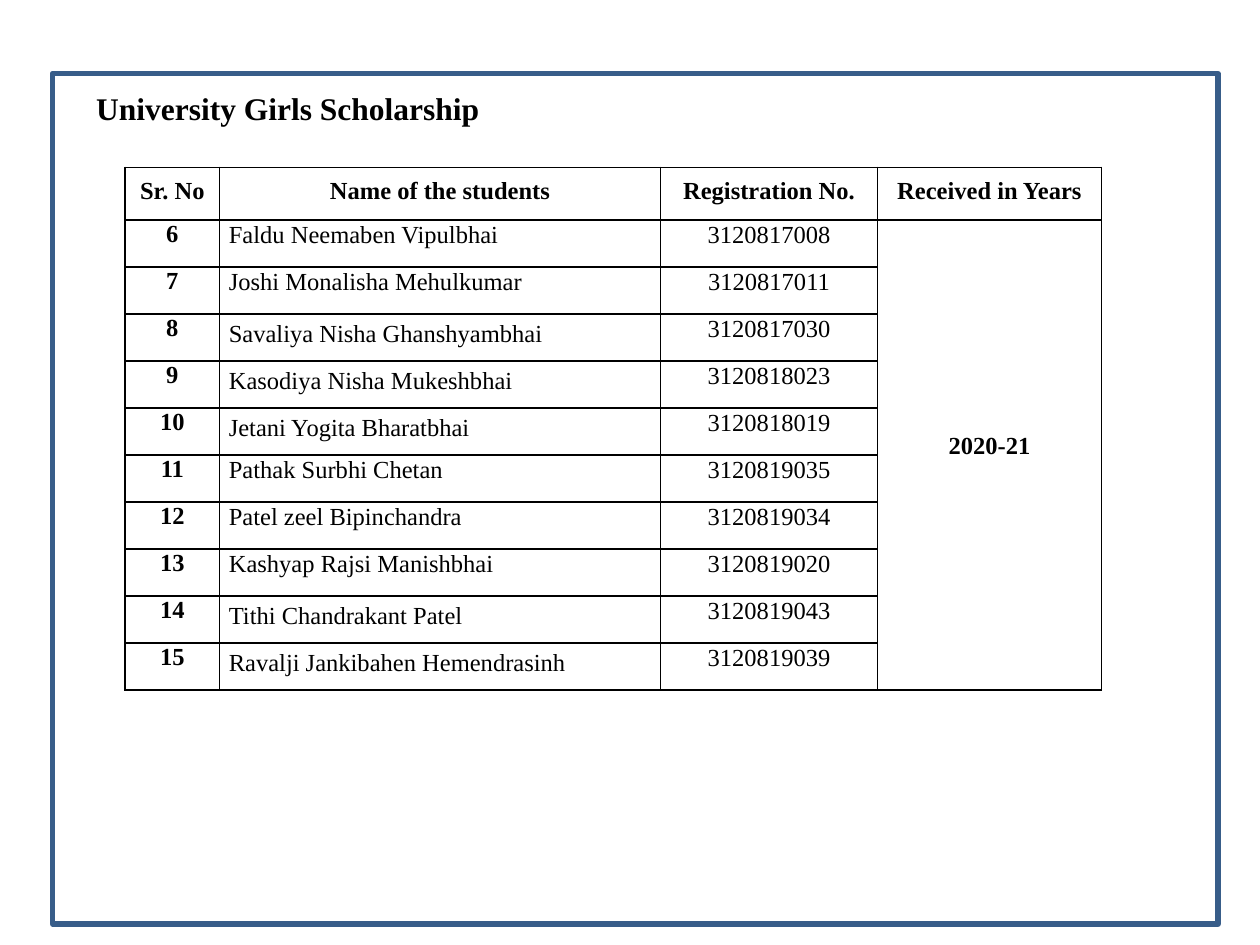
import dataclasses

import pptx
import pptx.dml.color
import pptx.enum.shapes
import pptx.enum.text
import pptx.oxml
import pptx.oxml.ns
import pptx.util

Pt = pptx.util.Pt
ALIGN = pptx.enum.text.PP_ALIGN
ANCHOR = pptx.enum.text.MSO_ANCHOR


@dataclasses.dataclass(frozen=True)
class Theme:
    """Colours, font and type sizes of the slide."""
    font: str = "Times New Roman"
    ink: str = "000000"
    frame: str = "385D89"
    title_size: float = 18
    table_size: float = 14
    frame_width: float = 3
    border_width: float = 1


THEME = Theme()
HEADINGS = ("Sr. No", "Name of the students", "Registration No.", "Received in Years")
FIRST_NUMBER = 6
STUDENTS = (
    ("Faldu Neemaben Vipulbhai", "3120817008", False),
    ("Joshi Monalisha Mehulkumar", "3120817011", False),
    ("Savaliya Nisha Ghanshyambhai", "3120817030", True),
    ("Kasodiya Nisha Mukeshbhai", "3120818023", True),
    ("Jetani Yogita Bharatbhai", "3120818019", True),
    ("Pathak Surbhi Chetan", "3120819035", False),
    ("Patel zeel Bipinchandra", "3120819034", False),
    ("Kashyap Rajsi Manishbhai", "3120819020", False),
    ("Tithi Chandrakant Patel", "3120819043", True),
    ("Ravalji Jankibahen Hemendrasinh", "3120819039", True),
)
YEARS = "2020-21"
COLUMN_WIDTHS = (54, 252, 124, 128)
HEADER_HEIGHT = 30
ROW_HEIGHT = 26.9


def set_margins(holder, left=0, top=0, bottom=0):
    """Set the inner margins of a cell or text frame."""
    holder.margin_left, holder.margin_right = Pt(left), Pt(0)
    holder.margin_top, holder.margin_bottom = Pt(top), Pt(bottom)


def write(paragraph, text, size, bold, align, before=0, line=None):
    """Write one run of text into a paragraph and format both."""
    paragraph.alignment = align
    paragraph.space_before = Pt(before)
    if line:
        paragraph.line_spacing = Pt(line)
    run = paragraph.add_run()
    run.text = text
    run.font.name = THEME.font
    run.font.size = Pt(size)
    run.font.bold = bold
    run.font.color.rgb = pptx.dml.color.RGBColor.from_string(THEME.ink)


def add_frame(slide):
    """Draw the border around the slide content."""
    frame = slide.shapes.add_shape(
        pptx.enum.shapes.MSO_SHAPE.RECTANGLE, Pt(30), Pt(42), Pt(666), Pt(486))
    frame.shadow.inherit = False
    frame.fill.background()
    frame.line.color.rgb = pptx.dml.color.RGBColor.from_string(THEME.frame)
    frame.line.width = Pt(THEME.frame_width)


def set_title(slide, text):
    """Place and format the slide title."""
    title = slide.shapes.title
    title.left, title.top, title.width, title.height = Pt(54), Pt(49.7), Pt(224), Pt(24)
    frame = title.text_frame
    frame.word_wrap = True
    frame.auto_size = pptx.enum.text.MSO_AUTO_SIZE.NONE
    frame.vertical_anchor = ANCHOR.TOP
    set_margins(frame, left=1, top=1)
    write(frame.paragraphs[0], text, THEME.title_size, True, ALIGN.LEFT, before=1)


def style_cell(cell):
    """Clear the fill of a cell and outline all its sides."""
    properties = cell._tc.get_or_add_tcPr()
    for side in ("lnL", "lnR", "lnT", "lnB"):
        properties.append(pptx.oxml.parse_xml(
            f'<a:{side} {pptx.oxml.ns.nsdecls("a")} w="{Pt(THEME.border_width)}">'
            f'<a:solidFill><a:srgbClr val="{THEME.ink}"/></a:solidFill></a:{side}>'))
    cell.fill.background()
    set_margins(cell)


def write_cell(cell, text, bold=False, align=ALIGN.CENTER, left=0, top=0, before=0, line=None):
    """Write text at the top of a table cell."""
    set_margins(cell, left=left, top=top)
    write(cell.text_frame.paragraphs[0], text, THEME.table_size, bold, align, before, line)


def add_students(slide):
    """Build the table of scholarship holders."""
    row_count = len(STUDENTS) + 1
    table = slide.shapes.add_table(
        row_count, len(HEADINGS), Pt(71.5), Pt(95.6), Pt(sum(COLUMN_WIDTHS)),
        Pt(HEADER_HEIGHT + ROW_HEIGHT * len(STUDENTS))).table
    for column, width in zip(table.columns, COLUMN_WIDTHS):
        column.width = Pt(width)
    for index, row in enumerate(table.rows):
        row.height = Pt(ROW_HEIGHT if index else HEADER_HEIGHT)
    for cell in table.iter_cells():
        style_cell(cell)

    for column, heading in enumerate(HEADINGS):
        write_cell(table.cell(0, column), heading, bold=True, top=5.9, before=5.9)
    for row, (name, registration, lowered) in enumerate(STUDENTS, start=1):
        placing = {"top": 3.8, "before": 4} if lowered else {"line": 16.3}
        write_cell(table.cell(row, 0), str(FIRST_NUMBER + row - 1), bold=True, top=0.6, before=0.6)
        write_cell(table.cell(row, 1), name, align=ALIGN.LEFT, left=5.3, **placing)
        write_cell(table.cell(row, 2), registration, line=16.3)

    years = table.cell(1, 3)
    years.merge(table.cell(row_count - 1, 3))
    write_cell(years, YEARS, bold=True)
    years.vertical_anchor = ANCHOR.MIDDLE
    years.margin_bottom = Pt(10)


def main():
    """Build and save the slide."""
    deck = pptx.Presentation()
    deck.slide_width, deck.slide_height = Pt(720), Pt(540)
    slide = deck.slides.add_slide(deck.slide_layouts.get_by_name("Title Only"))
    add_frame(slide)
    add_students(slide)
    set_title(slide, "University Girls Scholarship")
    deck.save("out.pptx")


if __name__ == "__main__":
    main()
